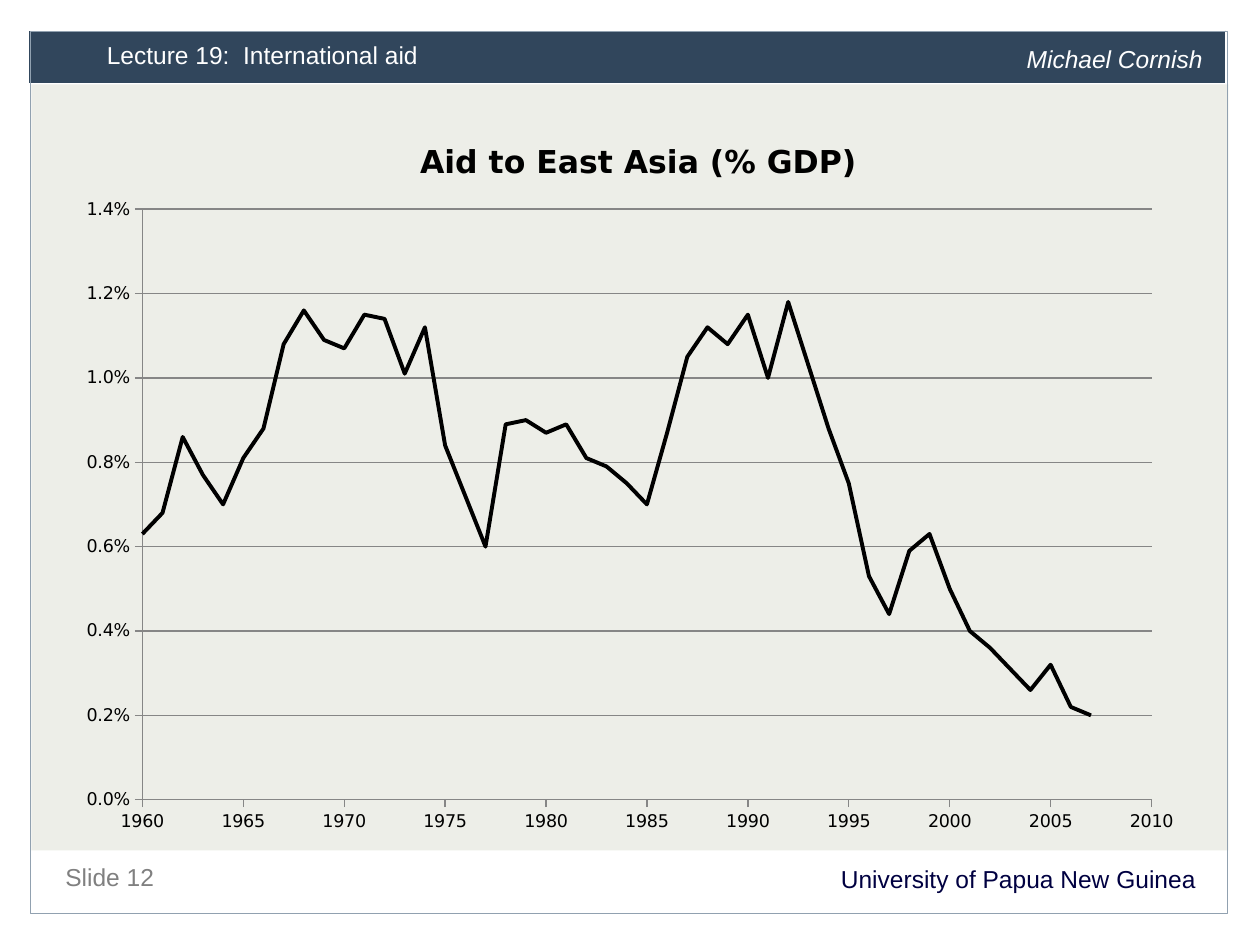
from lxml.etree import SubElement
from pptx import Presentation
from pptx.chart.data import XyChartData
from pptx.dml.color import RGBColor
from pptx.enum.chart import XL_CHART_TYPE, XL_TICK_MARK
from pptx.enum.shapes import MSO_SHAPE
from pptx.enum.text import PP_ALIGN
from pptx.oxml.ns import qn
from pptx.util import Inches, Pt


def color(hex_string):
    return RGBColor.from_string(hex_string)


def set_layout(parent, **shares):
    """Place a chart part by shares of the chart's width and height."""
    layout = parent.get_or_add_layout() if hasattr(parent, "get_or_add_layout") else parent.find(qn("c:layout"))
    if layout is None:
        layout = parent.makeelement(qn("c:layout"))
        parent.insert(0, layout)
    for child in list(layout):
        layout.remove(child)
    manual = SubElement(layout, qn("c:manualLayout"))
    if "w" in shares:
        SubElement(manual, qn("c:layoutTarget")).set("val", "inner")
    for name in ("xMode", "yMode"):
        SubElement(manual, qn(f"c:{name}")).set("val", "edge")
    for name, share in shares.items():
        SubElement(manual, qn(f"c:{name}")).set("val", str(share))


presentation = Presentation()
presentation.slide_width = Inches(10)
presentation.slide_height = Inches(7.5)
slide = presentation.slides.add_slide(presentation.slide_layouts[6])

# Panel, header band and frame: box, fill, line, line width
for box, fill, line, width in [
    ((0.25, 0.67, 9.5, 6.08), "EDEEE8", None, 0),
    ((0.23, 0.24, 9.5, 0.42), "31465C", "FFFFFF", 0.5),
    ((0.24, 0.25, 9.5, 7), None, "91A1B0", 0.75),
]:
    shape = slide.shapes.add_shape(MSO_SHAPE.RECTANGLE, *map(Inches, box))
    shape.shadow.inherit = False
    if fill:
        shape.fill.solid()
        shape.fill.fore_color.rgb = color(fill)
    else:
        shape.fill.background()
    if line:
        shape.line.color.rgb = color(line)
        shape.line.width = Pt(width)
    else:
        shape.line.fill.background()

# Header and footer texts: text, box, colour, line spacing, alignment, italic
for text, box, text_color, spacing, alignment, italic in [
    ("University of Papua New Guinea", (0.42, 6.83, 9.17, 0.32), "000041", 15, PP_ALIGN.RIGHT, False),
    ("Slide 12", (0.42, 6.75, 4.33, 0.34), "808080", 20, PP_ALIGN.LEFT, False),
    ("Lecture 19:  International aid", (0.75, 0.25, 6.13, 0.37), "FFFFFF", 18, PP_ALIGN.LEFT, False),
    ("Michael Cornish", (8.05, 0.28, 1.64, 0.37), "FFFFFF", 18, PP_ALIGN.LEFT, True),
]:
    frame = slide.shapes.add_textbox(*map(Inches, box)).text_frame
    frame.word_wrap = True
    paragraph = frame.paragraphs[0]
    paragraph.text = text
    paragraph.alignment = alignment
    paragraph.line_spacing = Pt(spacing)
    paragraph.font.name = "Arial"
    paragraph.font.size = Pt(14)
    paragraph.font.italic = italic
    paragraph.font.color.rgb = color(text_color)

# Aid as a share of GDP, one value a year from 1960
aid_shares = [
    0.0063, 0.0068, 0.0086, 0.0077, 0.007, 0.0081, 0.0088, 0.0108, 0.0116, 0.0109,
    0.0107, 0.0115, 0.0114, 0.0101, 0.0112, 0.0084, 0.0072, 0.006, 0.0089, 0.009,
    0.0087, 0.0089, 0.0081, 0.0079, 0.0075, 0.007, 0.0087, 0.0105, 0.0112, 0.0108,
    0.0115, 0.01, 0.0118, 0.0103, 0.0088, 0.0075, 0.0053, 0.0044, 0.0059, 0.0063,
    0.005, 0.004, 0.0036, 0.0031, 0.0026, 0.0032, 0.0022, 0.002,
]
chart_data = XyChartData()
aid_series = chart_data.add_series("Series 1")
for year, share in enumerate(aid_shares, start=1960):
    aid_series.add_data_point(year, share)

chart = slide.shapes.add_chart(
    XL_CHART_TYPE.XY_SCATTER_SMOOTH_NO_MARKERS,
    Inches(0.5), Inches(0.84), Inches(9), Inches(5.86), chart_data,
).chart
chart.has_legend = False
chart.font.name = "DejaVu Sans"
chart.font.size = Pt(10)
chart.font.color.rgb = color("000000")

chart.has_title = True
title = chart.chart_title
title.include_in_layout = False
paragraph = title.text_frame.paragraphs[0]
paragraph.text = "Aid to East Asia (% GDP)"
paragraph.font.name = "DejaVu Sans"
paragraph.font.size = Pt(18)
paragraph.font.bold = True
paragraph.font.color.rgb = color("000000")

for axis, low, high, step, number_format in [
    (chart.category_axis, 1960, 2010, 5, "0"),
    (chart.value_axis, 0, 0.014, 0.002, "0.0%"),
]:
    axis.minimum_scale = low
    axis.maximum_scale = high
    axis.major_unit = step
    axis.major_tick_mark = XL_TICK_MARK.OUTSIDE
    axis.tick_labels.number_format = number_format
    axis.tick_labels.number_format_is_linked = False
    axis.format.line.color.rgb = color("868686")
    axis.format.line.width = Pt(0.75)
chart.category_axis.has_major_gridlines = False
gridline = chart.value_axis.major_gridlines.format.line
gridline.color.rgb = color("868686")
gridline.width = Pt(0.75)

plot = chart.plots[0]
plot.vary_by_categories = False
series = plot.series[0]
series.smooth = True
series.format.line.color.rgb = color("000000")
series.format.line.width = Pt(2.25)

title_element = chart._chartSpace.chart.find(qn("c:title"))
set_layout(title_element, x=0.31, y=0.04)
set_layout(chart._chartSpace.chart.plotArea, x=0.07, y=0.14, w=0.89, h=0.8)

presentation.save("out.pptx")
